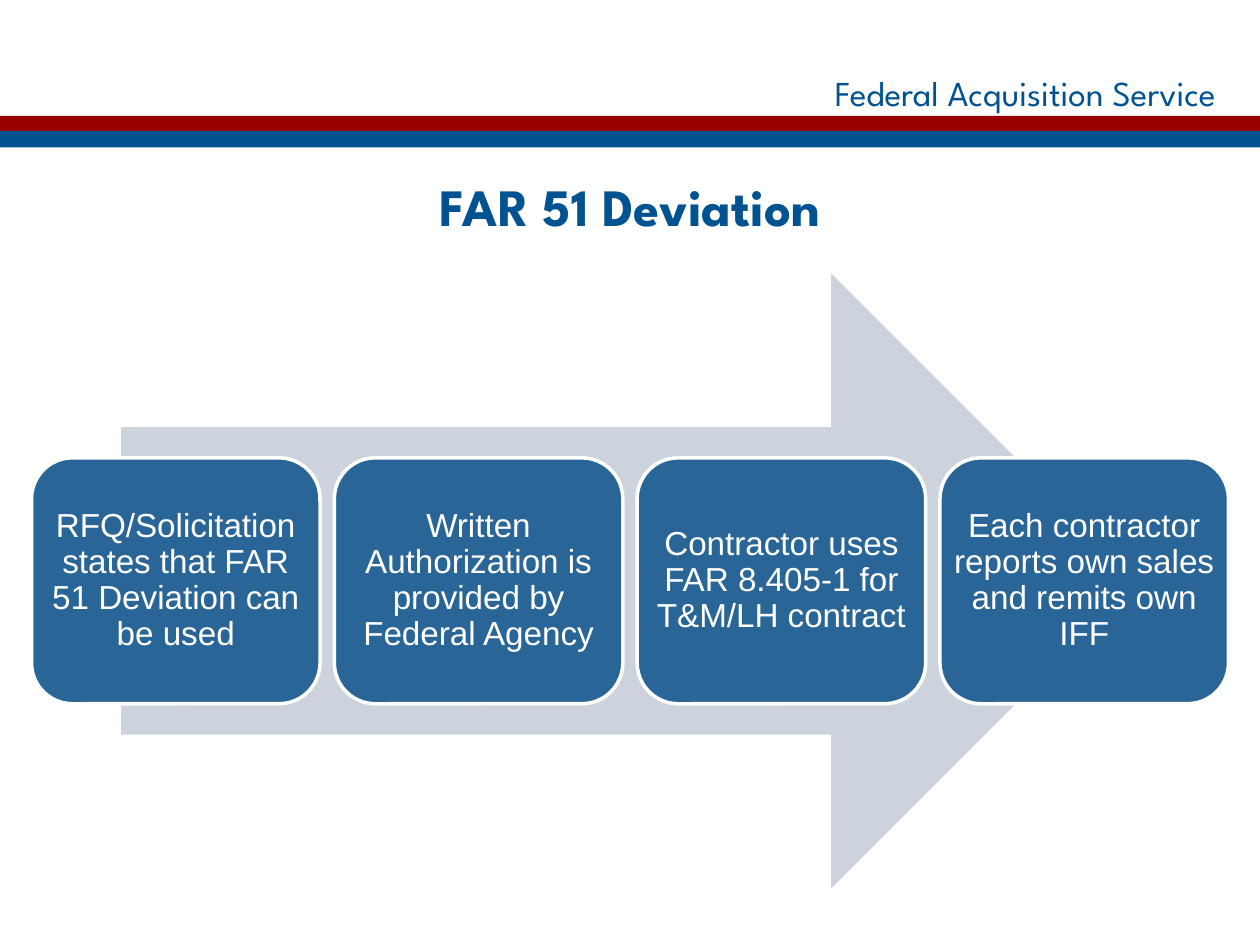
from dataclasses import dataclass

from pptx import Presentation
from pptx.dml.color import RGBColor
from pptx.enum import shapes, text
from pptx.util import Inches, Pt


@dataclass(frozen=True)
class Theme:
    navy: RGBColor = RGBColor.from_string("005390")
    red: RGBColor = RGBColor.from_string("990000")
    step: RGBColor = RGBColor.from_string("296597")
    arrow: RGBColor = RGBColor.from_string("CDD3DD")
    white: RGBColor = RGBColor.from_string("FFFFFF")
    heading_font: str = "League Spartan"
    body_font: str = "Arial"
    banner_size: int = 20
    title_size: int = 30
    step_size: int = 19


THEME = Theme()
STEPS = [
    "RFQ/Solicitation states that FAR 51 Deviation can be used",
    "Written Authorization is provided by Federal Agency",
    "Contractor uses FAR 8.405-1 for T&M/LH contract",
    "Each contractor reports own sales and remits own IFF",
]


def add_block(page, kind, left, top, width, height, fill):
    """Add a flat filled shape without outline; lengths in inches."""
    block = page.shapes.add_shape(
        kind, Inches(left), Inches(top), Inches(width), Inches(height))
    block.shadow.inherit = False
    block.fill.solid()
    block.fill.fore_color.rgb = fill
    block.line.fill.background()
    return block


def write(box, words, font_name, size, color, align, anchor, bold=False):
    frame = box.text_frame
    frame.vertical_anchor = anchor
    para = frame.paragraphs[0]
    para.text = words
    para.alignment = align
    para.font.name = font_name
    para.font.size = Pt(size)
    para.font.bold = bold
    para.font.color.rgb = color
    return para


def add_banner(page, left, top, width, height):
    """Service name above a red and a blue stripe."""
    stripe = 0.13
    name_height = height - 2 * stripe
    name_width = 4.25
    box = page.shapes.add_textbox(
        Inches(left + width - name_width - 0.25), Inches(top),
        Inches(name_width), Inches(name_height))
    box.text_frame.word_wrap = False
    write(box, "Federal Acquisition Service", THEME.heading_font,
          THEME.banner_size, THEME.navy, text.PP_ALIGN.RIGHT,
          text.MSO_ANCHOR.MIDDLE)
    for row, color in enumerate((THEME.red, THEME.navy)):
        add_block(page, shapes.MSO_SHAPE.RECTANGLE, left,
                  top + name_height + row * (stripe - 0.01),
                  width, stripe, color)


def add_title(page, left, top, width, height):
    box = page.shapes.add_textbox(
        Inches(left), Inches(top), Inches(width), Inches(height))
    box.text_frame.word_wrap = True
    write(box, "FAR 51 Deviation", THEME.heading_font, THEME.title_size,
          THEME.navy, text.PP_ALIGN.CENTER, text.MSO_ANCHOR.TOP, bold=True)


def add_process(page, left, top, width, height):
    """Evenly spaced steps over a wide arrow."""
    arrow_width = width * 0.85
    add_block(page, shapes.MSO_SHAPE.RIGHT_ARROW,
              left + (width - arrow_width) / 2, top, arrow_width, height,
              THEME.arrow)

    step_width, step_height = 2.29, height * 0.4
    pitch = (width - step_width) / (len(STEPS) - 1)
    for index, words in enumerate(STEPS):
        step = add_block(page, shapes.MSO_SHAPE.ROUNDED_RECTANGLE,
                         left + index * pitch,
                         top + (height - step_height) / 2,
                         step_width, step_height, THEME.step)
        step.line.color.rgb = THEME.white
        step.line.width = Pt(2)
        frame = step.text_frame
        frame.word_wrap = True
        frame.margin_left = frame.margin_right = 0
        frame.margin_top = frame.margin_bottom = 0
        para = write(step, words, THEME.body_font, THEME.step_size,
                     THEME.white, text.PP_ALIGN.CENTER,
                     text.MSO_ANCHOR.MIDDLE)
        para.line_spacing = 0.9


def main():
    deck = Presentation()
    deck.slide_width, deck.slide_height = Inches(10), Inches(7.5)
    page = deck.slides.add_slide(deck.slide_layouts[6])
    add_banner(page, 0, 0.55, 10, 0.63)
    add_title(page, 0, 1.33, 10, 1.18)
    add_process(page, 0.25, 2.17, 9.5, 4.88)
    deck.save("out.pptx")


if __name__ == "__main__":
    main()
